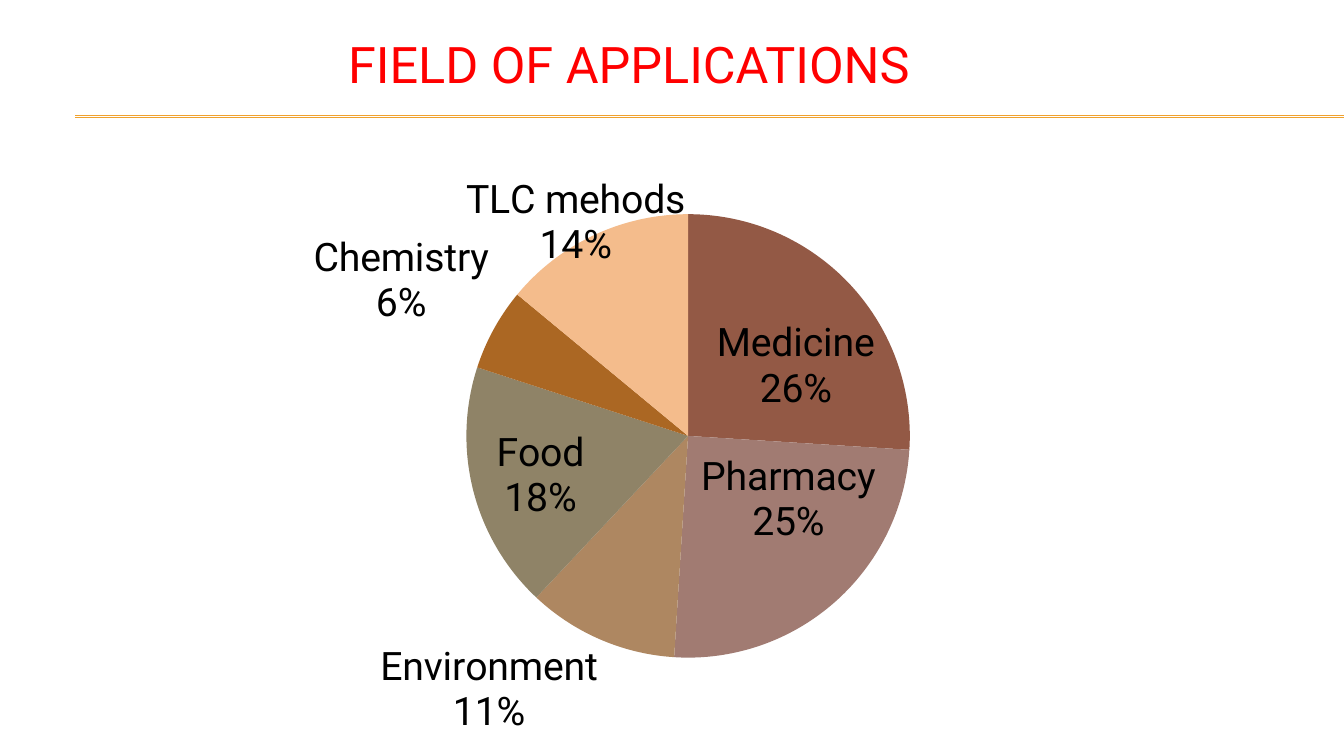
from lxml.etree import SubElement
from pptx import Presentation
from pptx.chart.data import CategoryChartData
from pptx.dml.color import RGBColor
from pptx.enum.chart import XL_CHART_TYPE as ChartType, XL_LABEL_POSITION as LabelPos
from pptx.enum.shapes import MSO_CONNECTOR as Connector
from pptx.enum.text import MSO_ANCHOR as Anchor, PP_ALIGN as Align
from pptx.oxml import parse_xml
from pptx.oxml.ns import nsdecls, qn
from pptx.util import Cm, Pt

FONT = "Roboto"
RED = RGBColor(0xFF, 0x00, 0x00)
BLACK = RGBColor(0x00, 0x00, 0x00)
GOLD = RGBColor(0xF0, 0xA2, 0x2E)
BROWN = RGBColor(0x93, 0x59, 0x45)
MAUVE = RGBColor(0xA1, 0x7B, 0x72)
TAN = RGBColor(0xAE, 0x87, 0x61)
OLIVE = RGBColor(0x8F, 0x83, 0x67)
RUST = RGBColor(0xAB, 0x67, 0x23)
PEACH = RGBColor(0xF4, 0xBC, 0x8C)

# field, percent, colour, label position, label shift as a share of the chart
FIELDS = [
    ("Field Of Applications", None, GOLD, None, None),
    ("Medicine", 26, BROWN, LabelPos.CENTER, (0.02, 0.01)),
    ("Pharmacy", 25, MAUVE, LabelPos.CENTER, (0.02, -0.03)),
    ("Environment", 11, TAN, LabelPos.OUTSIDE_END, None),
    ("Food", 18, OLIVE, LabelPos.CENTER, (-0.03, 0.02)),
    ("Chemistry", 6, RUST, LabelPos.OUTSIDE_END, None),
    ("TLC mehods", 14, PEACH, LabelPos.OUTSIDE_END, (0.07, 0.06)),
]


def manual_layout(**settings):
    layout = parse_xml(f"<c:layout {nsdecls('c')}><c:manualLayout/></c:layout>")
    for tag, value in settings.items():
        SubElement(layout[0], qn(f"c:{tag}")).set("val", str(value))
    return layout


def style_font(font, size, color):
    font.name = FONT
    font.size = Pt(size)
    font.color.rgb = color


prs = Presentation()
prs.slide_width, prs.slide_height = Cm(33.87), Cm(19.05)
slide = prs.slides.add_slide(prs.slide_layouts[6])

# Double rule under the title
for rule_y in (Cm(2.92), Cm(2.95)):
    rule = slide.shapes.add_connector(
        Connector.STRAIGHT, Cm(1.9), rule_y, prs.slide_width, rule_y)
    rule.line.color.rgb = GOLD
    rule.line.width = Pt(0.75)
    SubElement(rule.element.spPr, qn("a:effectLst"))

title = slide.shapes.add_textbox(Cm(1.07), Cm(0.43), Cm(29.57), Cm(2.34))
title_frame = title.text_frame
title_frame.word_wrap = True
title_frame.vertical_anchor = Anchor.MIDDLE
title_frame.text = "FIELD OF APPLICATIONS"
title_frame.paragraphs[0].alignment = Align.CENTER
style_font(title_frame.paragraphs[0].runs[0].font, 36, RED)

# Pie of the fields
shares = CategoryChartData()
shares.categories = [field[0] for field in FIELDS]
shares.add_series("Series 1", [field[1] for field in FIELDS])
pie = slide.shapes.add_chart(
    ChartType.PIE, Cm(0), Cm(2.97), Cm(33.87), Cm(16.08), shares).chart
pie.has_title = False
pie.has_legend = False
style_font(pie.font, 10, BLACK)
pie.plots[0].vary_by_categories = True

plot_area = pie.element.find(f".//{qn('c:plotArea')}")
for old_layout in plot_area.findall(qn("c:layout")):
    plot_area.remove(old_layout)
plot_area.insert(0, manual_layout(
    layoutTarget="inner", xMode="edge", yMode="edge",
    x=0.347, y=0.151, w=0.33, h=0.695))

series = pie.plots[0].series[0]
labels = series.data_labels
labels.number_format = "0%"
labels.number_format_is_linked = False
style_font(labels.font, 28, BLACK)

for index, (field, percent, color, position, shift) in enumerate(FIELDS):
    point = series.points[index]
    point.format.fill.solid()
    point.format.fill.fore_color.rgb = color
    if percent is not None:
        point.data_label.position = position
        style_font(point.data_label.font, 28, BLACK)

# Every label shows its category above its percentage
SHOWN = {"showVal": "0", "showCatName": "1", "showPercent": "1", "showLeaderLines": "0"}
for tag, value in SHOWN.items():
    for switch in pie.element.iter(qn(f"c:{tag}")):
        switch.set("val", value)
for switch in list(pie.element.iter(qn("c:showBubbleSize"))):
    separator = parse_xml(f"<c:separator {nsdecls('c')}>\n</c:separator>")
    switch.addnext(separator)

for label in pie.element.iter(qn("c:dLbl")):
    shift = FIELDS[int(label.find(qn("c:idx")).get("val"))][4]
    if shift:
        label.insert(1, manual_layout(x=shift[0], y=shift[1]))

prs.save("out.pptx")
